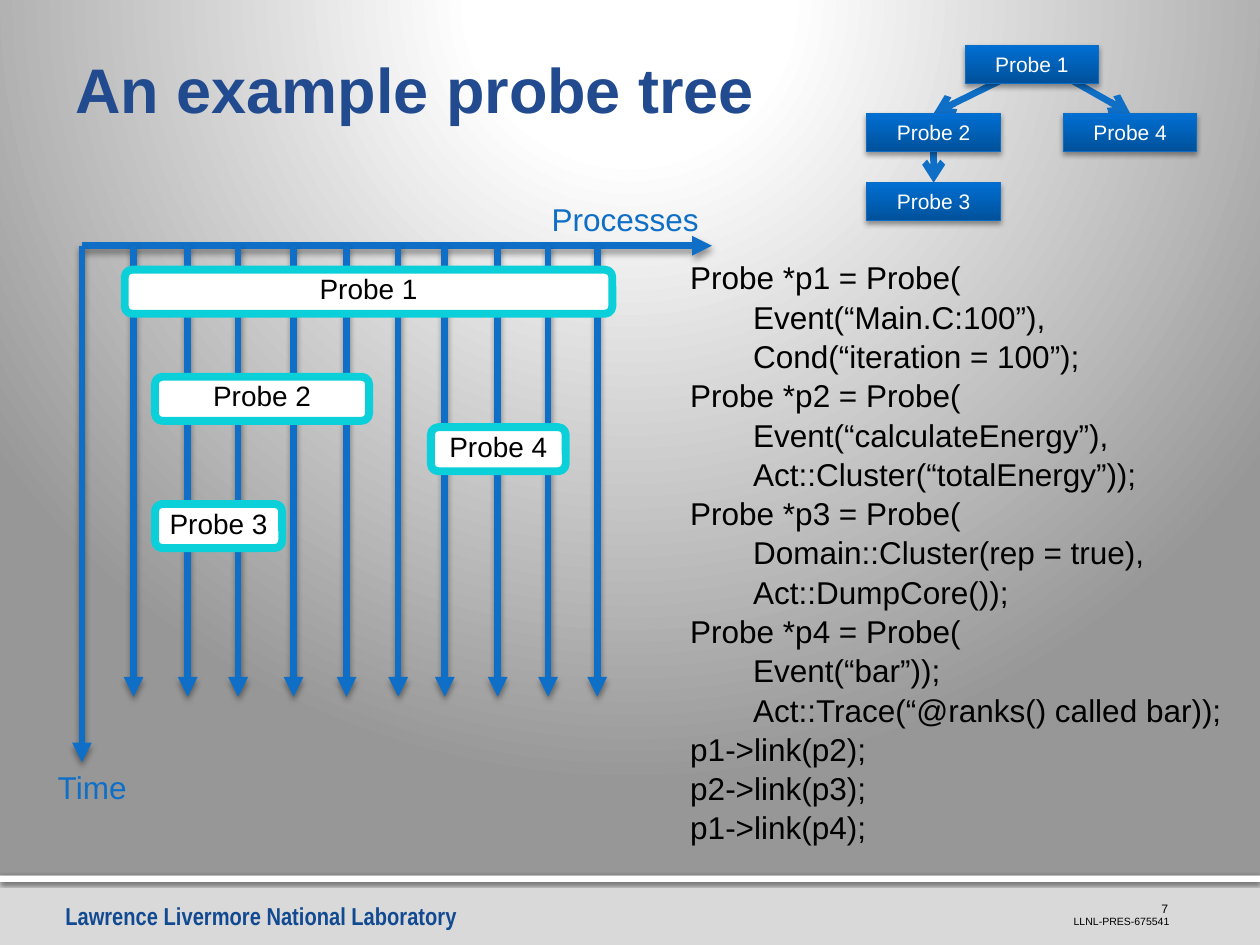
"""Build the slide that explains an example probe tree."""
from lxml import etree
from pptx import Presentation
from pptx.dml.color import RGBColor
from pptx.enum.shapes import MSO_CONNECTOR, MSO_SHAPE
from pptx.enum.text import MSO_ANCHOR, PP_ALIGN
from pptx.oxml import parse_xml
from pptx.oxml.ns import nsdecls, qn
from pptx.util import Inches, Pt

STRAIGHT = MSO_CONNECTOR.STRAIGHT
RECTANGLE, ROUNDED = MSO_SHAPE.RECTANGLE, MSO_SHAPE.ROUNDED_RECTANGLE
TOP, MIDDLE, BOTTOM = MSO_ANCHOR.TOP, MSO_ANCHOR.MIDDLE, MSO_ANCHOR.BOTTOM
LEFT, CENTER, RIGHT = PP_ALIGN.LEFT, PP_ALIGN.CENTER, PP_ALIGN.RIGHT

COLORS = {
    "white": "FFFFFF", "black": "000000", "edge gray": "979797", "footer": "D9D9D9",
    "title": "214A8F", "laboratory": "124A91", "arrow": "0F6FC6", "box line": "0A6DC6",
    "box bottom": "00519A", "box top": "006FD3", "probe line": "0BD0D9",
}
RGB = {name: RGBColor.from_string(value) for name, value in COLORS.items()}

CODE = """Probe *p1 = Probe(
\tEvent(“Main.C:100”),
\tCond(“iteration = 100”);
Probe *p2 = Probe(
\tEvent(“calculateEnergy”),
\tAct::Cluster(“totalEnergy”));
Probe *p3 = Probe(
\tDomain::Cluster(rep = true),
\tAct::DumpCore());
Probe *p4 = Probe(
\tEvent(“bar”));
\tAct::Trace(“@ranks() called bar));
p1->link(p2);
p2->link(p3);
p1->link(p4);"""


def add_text(shape, text, size=18, color="black", font="Arial", bold=False, align=LEFT,
             anchor=TOP, wrap=True, spacing=1.0, margins=(0.1, 0.05, 0.1, 0.05)):
    frame = shape.text_frame
    frame.word_wrap = wrap
    frame.vertical_anchor = anchor
    frame.margin_left, frame.margin_top, frame.margin_right, frame.margin_bottom = map(Inches, margins)
    for index, line in enumerate(text.split("\n")):
        paragraph = frame.add_paragraph() if index else frame.paragraphs[0]
        paragraph.alignment = align
        paragraph.line_spacing = spacing
        if line.startswith("\t"):
            paragraph._p.get_or_add_pPr().set("marL", str(Inches(0.5)))
        run = paragraph.add_run()
        run.text = line.strip()
        run.font.name, run.font.size, run.font.bold = font, Pt(size), bold
        run.font.color.rgb = RGB[color]


def add_effects(shape, blur=0, distance=2, alpha=38):
    effects = etree.SubElement(shape._element.spPr, qn("a:effectLst"))
    if blur:
        shadow = etree.SubElement(effects, qn("a:outerShdw"), blurRad=str(Pt(blur)),
                                  dist=str(Pt(distance)), dir="5400000", rotWithShape="0")
        shade = etree.SubElement(shadow, qn("a:srgbClr"), val=COLORS["black"])
        etree.SubElement(shade, qn("a:alpha"), val=str(alpha * 1000))


presentation = Presentation()
presentation.slide_width, presentation.slide_height = Inches(10), Inches(7.5)
slide = presentation.slides.add_slide(presentation.slide_layouts[6])
shapes = slide.shapes

slide.background.fill.solid()
background = slide._element.find(".//" + qn("p:bgPr"))
background.remove(background[0])
stops = "".join(
    f'<a:gs pos="{position * 1000}"><a:srgbClr val="{COLORS[color]}"/></a:gs>'
    for position, color in [(0, "white"), (20, "white"), (100, "edge gray")])
background.insert(0, parse_xml(
    f'<a:gradFill {nsdecls("a")} rotWithShape="1"><a:gsLst>{stops}</a:gsLst><a:path path="circle">'
    '<a:fillToRect l="10000" t="-25000" r="10000" b="125000"/></a:path></a:gradFill>'))

for height, color, blur, distance, alpha in [(0.55, "footer", 3.1, 2, 38), (0.05, "white", 2.5, 0.8, 60)]:
    bar = shapes.add_shape(RECTANGLE, 0, Inches(6.95), Inches(10), Inches(height))
    bar.fill.solid()
    bar.fill.fore_color.rgb = RGB[color]
    bar.line.fill.background()
    add_effects(bar, blur, distance, alpha)

tree = {}
for name, left, top in [("Probe 1", 7.66, 0.36), ("Probe 2", 6.88, 0.9),
                        ("Probe 4", 8.44, 0.9), ("Probe 3", 6.88, 1.45)]:
    box = shapes.add_shape(RECTANGLE, Inches(left), Inches(top), Inches(1.06), Inches(0.3))
    box.fill.gradient()
    box.fill.gradient_angle = 90
    for stop, color, position in zip(box.fill.gradient_stops, ("box bottom", "box top"), (0, 1)):
        stop.color.rgb = RGB[color]
        stop.position = position
    box.line.color.rgb = RGB["box line"]
    box.line.width = Pt(0.5)
    add_effects(box, 3.1)
    add_text(box, name, size=12, color="white", align=CENTER, anchor=MIDDLE)
    tree[name] = box

process_columns = [1.06, 1.49, 1.89, 2.33, 2.75, 3.16, 3.53, 3.95, 4.35, 4.74]
arrows = [(8.44, 0.6, 8.97, 0.9, "Probe 4"), (8.02, 0.6, 7.41, 0.9, "Probe 2"),
          (7.41, 1.2, 7.41, 1.45, "Probe 3"),
          (0.65, 1.95, 5.65, 1.95, None), (0.65, 1.95, 0.65, 6.05, None)]
arrows += [(column, 1.95, column, 5.53, None) for column in process_columns]
for start_x, start_y, end_x, end_y, target in arrows:
    arrow = shapes.add_connector(STRAIGHT, Inches(start_x), Inches(start_y), Inches(end_x), Inches(end_y))
    arrow.line.color.rgb = RGB["arrow"]
    arrow.line.width = Pt(3.78)
    outline = arrow._element.spPr.find(qn("a:ln"))
    etree.SubElement(outline, qn("a:tailEnd"), type="arrow" if target else "triangle")
    add_effects(arrow, blur=0 if target else 3.5)
    if target:
        arrow.end_connect(tree[target], 0)
        shapes._spTree.insert(2, arrow._element)
    if target == "Probe 3":
        arrow.begin_connect(tree["Probe 2"], 2)

for name, left, top, width in [("Probe 1", 0.99, 2.14, 3.87), ("Probe 2", 1.23, 2.99, 1.7),
                               ("Probe 4", 3.42, 3.39, 1.07), ("Probe 3", 1.23, 4, 1.01)]:
    probe = shapes.add_shape(ROUNDED, Inches(left), Inches(top), Inches(width), Inches(0.35))
    probe.fill.solid()
    probe.fill.fore_color.rgb = RGB["white"]
    probe.line.color.rgb = RGB["probe line"]
    probe.line.width = Pt(4.5)
    probe.shadow.inherit = False
    add_text(probe, name, size=16, align=CENTER, anchor=BOTTOM)

for text, left, top, width, height, style in [
    ("An example probe tree", 0.5, 0.24, 9, 0.81,
     dict(size=36, color="title", bold=True, anchor=BOTTOM, margins=(0.1, 0.05, 0.05, 0.05))),
    (CODE, 5.38, 1.99, 4.57, 4.64, dict(spacing=1.04)),
    ("Processes", 4.28, 1.54, 1.38, 0.4, dict(color="arrow", wrap=False)),
    ("Time", 0.36, 6.05, 0.75, 0.4, dict(color="arrow", wrap=False)),
    ("Lawrence Livermore National Laboratory", 0.42, 7.1, 3.34, 0.34,
     dict(size=14, color="laboratory", font="Arial Narrow", bold=True)),
    ("LLNL-PRES-675541", 8.51, 7.21, 0.87, 0.15,
     dict(size=6, align=RIGHT, anchor=BOTTOM, wrap=False, margins=(0, 0.05, 0.1, 0))),
    ("7", 8.98, 7.1, 0.39, 0.17, dict(size=7, align=RIGHT)),
]:
    text_box = shapes.add_textbox(Inches(left), Inches(top), Inches(width), Inches(height))
    add_text(text_box, text, **style)

presentation.save("out.pptx")
